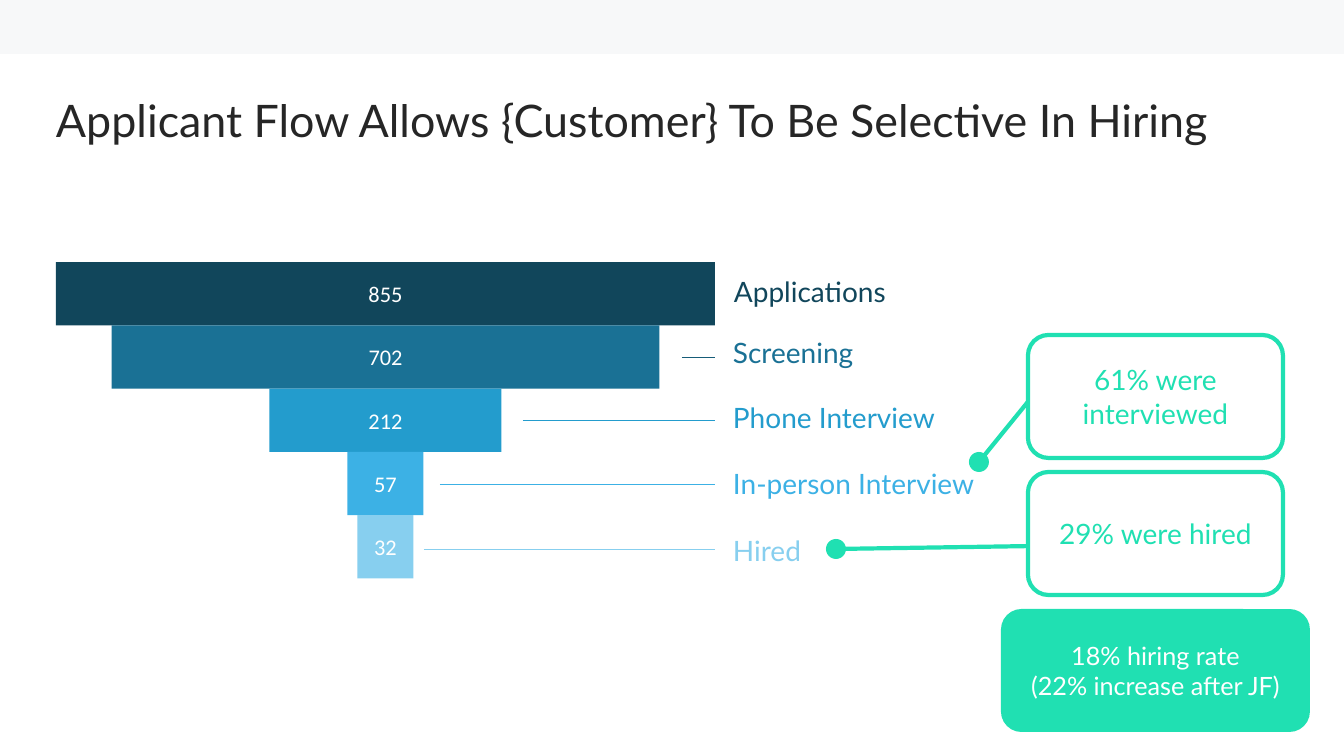
import pptx
import pptx.util
import pptx.dml.color
import pptx.enum.shapes
import pptx.enum.text
import pptx.oxml.ns
import lxml.etree
from dataclasses import dataclass

Kind = pptx.enum.shapes.MSO_SHAPE
Anchor = pptx.enum.text.MSO_ANCHOR
Align = pptx.enum.text.PP_ALIGN


@dataclass(frozen=True)
class Theme:
    white: str = "FFFFFF"
    band: str = "F7F8F9"
    ink: str = "262626"
    mint: str = "20E0B2"
    steps: tuple = ("11465B", "1A7195", "239CCD", "3CB1E5", "87CFEF")
    rule: str = "165C78"
    head: int = 32
    label: int = 20
    note: int = 18
    value: int = 16
    thick: float = 3
    thin: float = 0.5
    face: str = "Lato"
    digits: str = "Calibri"


def px(n):
    return pptx.util.Emu(round(n * 914400 / 100.8))


def rgb(code):
    return pptx.dml.color.RGBColor.from_string(code)


def apply(item, style):
    for name, value in style.items():
        setattr(item, name, value)


class Board:
    def __init__(self, slide, theme):
        self.shapes = slide.shapes
        self.theme = theme

    def fill_text(self, shape, text, size, color, face=None, inset=10,
                  anchor=Anchor.MIDDLE, align=Align.CENTER, wrap=True,
                  space=1.0):
        frame = shape.text_frame
        frame.text = text
        apply(frame, {"word_wrap": wrap, "vertical_anchor": anchor,
                      **{f"margin_{side}": px(inset)
                         for side in ("left", "right", "top", "bottom")}})
        for para in frame.paragraphs:
            apply(para, {"alignment": align, "line_spacing": space})
            apply(para.font, {"name": face or self.theme.face,
                              "size": pptx.util.Pt(size)})
            para.font.color.rgb = rgb(color)

    def text(self, box, text, size, color, **style):
        shape = self.shapes.add_textbox(*map(px, box))
        self.fill_text(shape, text, size, color, anchor=Anchor.TOP,
                       align=Align.LEFT, **style)

    def shape(self, kind, box, fill, edge=None):
        shape = self.shapes.add_shape(kind, *map(px, box))
        shape.shadow.inherit = False
        shape.fill.solid()
        shape.fill.fore_color.rgb = rgb(fill)
        if edge:
            shape.line.color.rgb = rgb(edge)
            shape.line.width = pptx.util.Pt(self.theme.thick)
        else:
            shape.line.fill.background()
        return shape

    def line(self, start, end, color, width):
        line = self.shapes.add_connector(
            pptx.enum.shapes.MSO_CONNECTOR.STRAIGHT, *map(px, start + end))
        line.line.color.rgb = rgb(color)
        line.line.width = pptx.util.Pt(width)
        lxml.etree.SubElement(line._element.spPr,
                              pptx.oxml.ns.qn("a:effectLst"))

    def callout(self, top, text, start, dot):
        """Outlined box tied by a line to a dot centred at the given point."""
        look = self.theme
        self.line(start, dot, look.mint, look.thick)
        box = self.shape(Kind.ROUNDED_RECTANGLE, (1028, top, 255, 123),
                         look.white, look.mint)
        self.fill_text(box, text, look.label, look.mint)
        x, y = dot
        self.shape(Kind.OVAL, (x - 10, y - 10, 20, 20), look.mint)


# value, bar width, label, label left, label top, label width
STAGES = [
    ("855", 659, "Applications", 723, 263, 182),
    ("702", 548, "Screening", 722, 325, 156),
    ("212", 232, "Phone Interview", 722, 390, 226),
    ("57", 76, "In-person Interview", 722, 456, 266),
    ("32", 56, "Hired", 722, 522, 112),
]
LEFT, TOP, STEP, FULL = 56, 262, 63.3, 659


def main():
    deck = pptx.Presentation()
    apply(deck, {"slide_width": px(1344), "slide_height": px(756)})
    look = Theme()
    board = Board(deck.slides.add_slide(deck.slide_layouts[6]), look)

    board.shape(Kind.RECTANGLE, (0, 0, 1344, 54), look.band)
    board.text((LEFT, 99, 1227, 85),
               "Applicant Flow Allows {Customer} To Be Selective In Hiring",
               look.head, look.ink, inset=0, space=0.9)

    for row, (value, width, label, x, y, span) in enumerate(STAGES):
        color = look.steps[row]
        bar = board.shape(
            Kind.RECTANGLE,
            (LEFT + (FULL - width) / 2, TOP + row * STEP, width, STEP), color)
        board.fill_text(bar, value, look.value, look.white, face=look.digits)
        board.text((x, y, span, 66), label, look.label, color,
                   inset=11, wrap=False)

    rate = board.shape(Kind.ROUNDED_RECTANGLE, (1001, 609, 309, 123),
                       look.mint)
    board.fill_text(rate, "18% hiring rate\n(22% increase after JF)",
                    look.note, look.white)
    board.callout(472, "29% were hired", (1035, 546), (836, 549))
    board.callout(335, "61% were interviewed", (1053, 371), (979, 462))

    rules = zip((682, 523, 440, 424), (357, 420, 484, 549),
                (look.rule,) + look.steps[2:])
    for x, y, color in rules:
        board.line((x, y), (LEFT + FULL, y), color, look.thin)

    deck.save("out.pptx")


if __name__ == "__main__":
    main()
